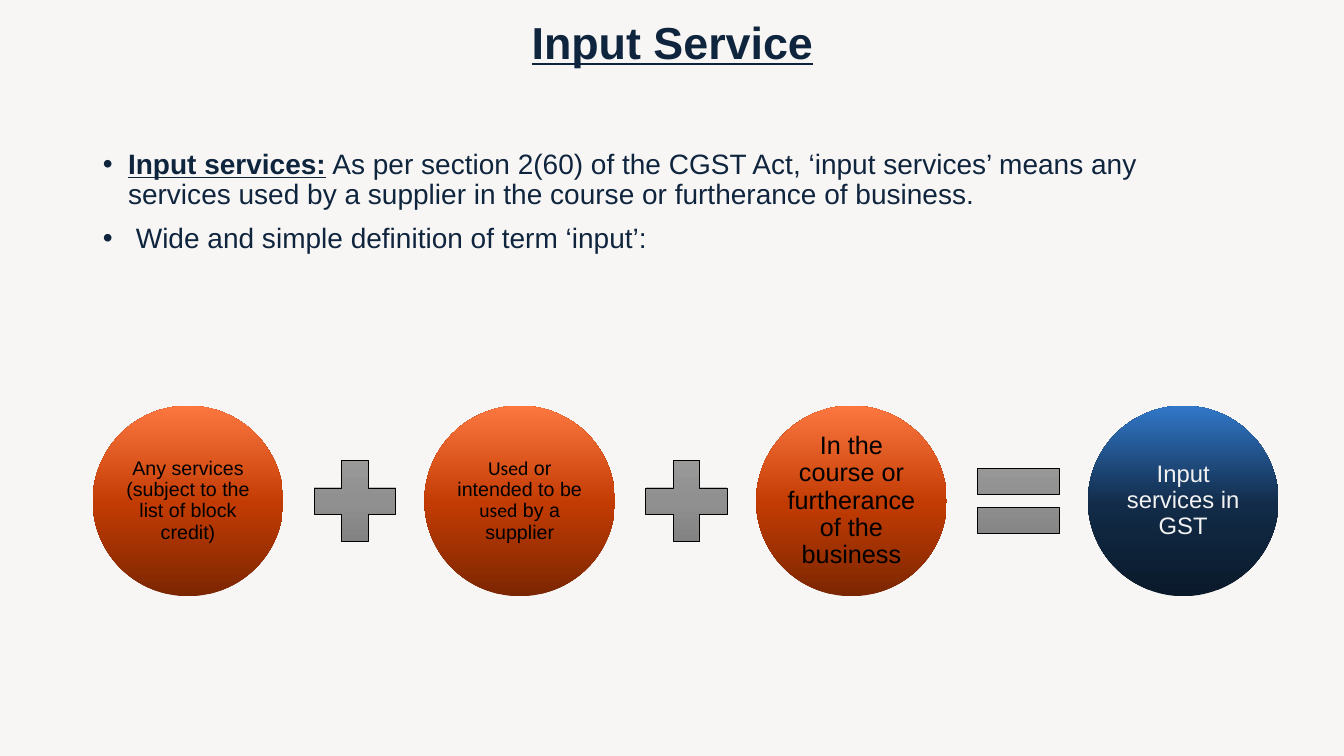
"""Build the Input Service slide: a definition and a picture equation."""
from copy import deepcopy
from dataclasses import dataclass

from pptx import Presentation
from pptx.dml.color import RGBColor
from pptx.enum.shapes import MSO_SHAPE
from pptx.enum.text import MSO_ANCHOR, MSO_AUTO_SIZE, PP_ALIGN
from pptx.oxml.ns import qn
from pptx.util import Inches, Pt

CIRCLE, PLUS, EQUAL = MSO_SHAPE.OVAL, MSO_SHAPE.MATH_PLUS, MSO_SHAPE.MATH_EQUAL
CENTER, MIDDLE, TOP = PP_ALIGN.CENTER, MSO_ANCHOR.MIDDLE, MSO_ANCHOR.TOP
NO_FIT = MSO_AUTO_SIZE.NONE


@dataclass(frozen=True)
class Theme:
    """Colours, fonts and type sizes."""
    background: str = "F8F6F5"
    navy: str = "0F253E"
    black: str = "000000"
    pale: str = "F2F2F2"
    orange_fade: tuple = ((0, "7B2602"), (0.48, "C23B03"), (1, "FC7740"))
    blue_fade: tuple = ((0, "0A192A"), (0.48, "122B48"), (1, "3178C9"))
    grey_fade: tuple = ((0, "9D9D9D"), (0.5, "909090"), (1, "7C7C7C"))
    font: str = "Arial"
    accent_font: str = "Calibri"
    title_size: int = 32
    body_size: int = 20
    small_size: int = 14
    large_size: int = 18
    result_size: int = 17


THEME = Theme()
LEFT, CONTENT_WIDTH = 0.92, 11.5
PITCH, MIDLINE = 3.29, 4.97
CIRCLE_SIZE, OPERATOR_SIZE = 1.89, 1.1
OPERATOR_OFFSET = 2.05
UPWARD, DOWNWARD = 90, 270


def place(placeholder, top, height, anchor):
    """Move a placeholder into the content column and return its text frame."""
    placeholder.left, placeholder.top = Inches(LEFT), Inches(top)
    placeholder.width, placeholder.height = Inches(CONTENT_WIDTH), Inches(height)
    frame = placeholder.text_frame
    frame.auto_size, frame.vertical_anchor = NO_FIT, anchor
    return frame


def style(paragraph, size, color):
    """Set the shared type style of a paragraph."""
    paragraph.line_spacing = 0.9
    paragraph.font.name, paragraph.font.size = THEME.font, Pt(size)
    paragraph.font.color.rgb = RGBColor.from_string(color)


def add_title(slide, text):
    """Fill the title placeholder."""
    heading = place(slide.shapes.title, 0.15, 0.59, MIDDLE).paragraphs[0]
    heading.text = text
    heading.alignment = CENTER
    style(heading, THEME.title_size, THEME.navy)
    heading.font.bold = heading.font.underline = True


def add_bullets(slide, bullets):
    """Fill the body placeholder with (lead term, text) bullets."""
    frame = place(slide.placeholders[1], 1.44, 4.76, TOP)
    for index, (term, text) in enumerate(bullets):
        bullet = frame.add_paragraph() if index else frame.paragraphs[0]
        style(bullet, THEME.body_size, THEME.navy)
        bullet.space_before = Pt(10)
        properties = bullet._p.get_or_add_pPr()
        properties.set("marL", str(Inches(0.25)))
        properties.set("indent", str(-Inches(0.25)))
        if term:
            lead = bullet.add_run()
            lead.text = term
            lead.font.bold = lead.font.underline = True
        bullet.add_run().text = text


def fade(shape, stops, angle):
    """Give a shape a three-stop linear gradient."""
    shape.shadow.inherit = False
    shape.fill.gradient()
    shape.fill.gradient_angle = angle
    stop_list = shape._element.spPr.find(qn("a:gradFill")).find(qn("a:gsLst"))
    stop_list.append(deepcopy(stop_list[0]))
    for stop, (position, color) in zip(shape.fill.gradient_stops, stops):
        stop.position = position
        stop.color.rgb = RGBColor.from_string(color)


def add_symbol(slide, kind, left, size):
    """Add a square-framed shape centred on the equation's midline."""
    return slide.shapes.add_shape(
        kind, Inches(left), Inches(MIDLINE - size / 2), Inches(size), Inches(size))


def add_term(slide, column, pieces, stops, size, color):
    """Add a circle holding (text, font) pieces."""
    circle = add_symbol(slide, CIRCLE, LEFT + column * PITCH, CIRCLE_SIZE)
    fade(circle, stops, UPWARD)
    circle.line.fill.background()
    frame = circle.text_frame
    frame.word_wrap, frame.vertical_anchor = True, MIDDLE
    frame.margin_left = frame.margin_right = Inches(0.02)
    frame.margin_top = frame.margin_bottom = Inches(0.02)
    label = frame.paragraphs[0]
    label.alignment = CENTER
    style(label, size, color)
    for text, font in pieces:
        run = label.add_run()
        run.text = text
        if font != THEME.font:
            run.font.name = font


def add_operator(slide, column, kind):
    """Add the sign that follows the circle in a column."""
    sign = add_symbol(slide, kind, LEFT + column * PITCH + OPERATOR_OFFSET, OPERATOR_SIZE)
    fade(sign, THEME.grey_fade, DOWNWARD)
    sign.line.color.rgb = RGBColor.from_string(THEME.black)
    sign.line.width = Pt(0.5)


def main():
    """Build and save the slide."""
    deck = Presentation()
    deck.slide_width, deck.slide_height = Inches(13.33), Inches(7.5)
    slide = deck.slides.add_slide(deck.slide_layouts[1])
    slide.background.fill.solid()
    slide.background.fill.fore_color.rgb = RGBColor.from_string(THEME.background)

    add_title(slide, "Input Service")
    add_bullets(slide, [
        ("Input services:", " As per section 2(60) of the CGST Act, ‘input services’ means any "
         "services used by a supplier in the course or furtherance of business."),
        ("", " Wide and simple definition of term ‘input’:"),
    ])

    plain, accent = THEME.font, THEME.accent_font
    orange = THEME.orange_fade
    terms = [
        ([("Any services (subject to the list of block credit)", plain)],
         orange, THEME.small_size, THEME.black),
        ([("Used", accent), (" or intended to be ", plain),
          ("used", accent), (" by a supplier", plain)],
         orange, THEME.small_size, THEME.black),
        ([("In the course or furtherance of the business", plain)],
         orange, THEME.large_size, THEME.black),
        ([("Input services in GST", plain)],
         THEME.blue_fade, THEME.result_size, THEME.pale),
    ]
    for column, term in enumerate(terms):
        add_term(slide, column, *term)
    for column, kind in enumerate((PLUS, PLUS, EQUAL)):
        add_operator(slide, column, kind)

    deck.save("out.pptx")


if __name__ == "__main__":
    main()
